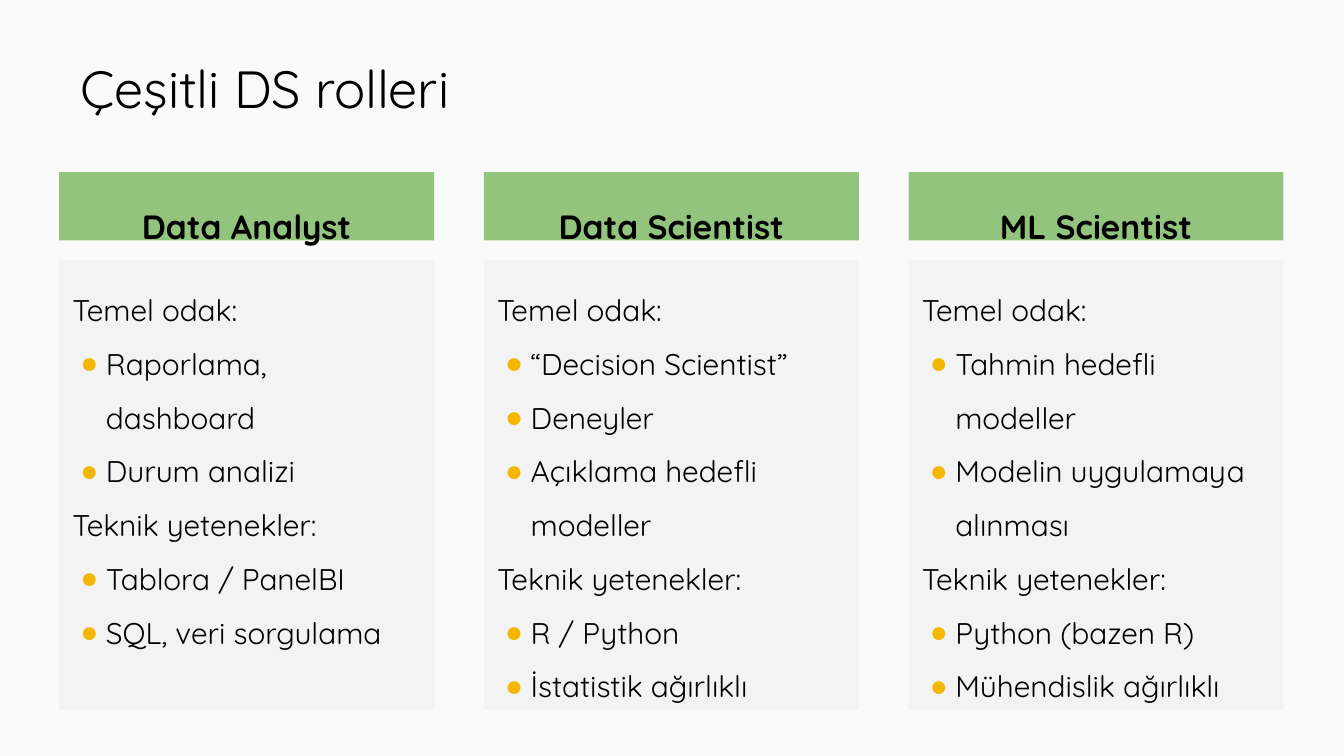
"""Build a slide that compares three data science roles in columns."""
from dataclasses import dataclass

from lxml.etree import SubElement
from pptx import Presentation
from pptx.dml.color import RGBColor
from pptx.enum.shapes import MSO_SHAPE
from pptx.enum.text import MSO_ANCHOR, PP_ALIGN
from pptx.oxml.ns import qn
from pptx.util import Inches, Pt


@dataclass(frozen=True)
class Theme:
    font: str = "Quicksand"
    mark: str = "Arial"
    page: str = "FAFAFA"
    ink: str = "000000"
    head: str = "93C47D"
    card: str = "F3F3F3"
    dot: str = "F4B700"
    title: int = 28
    label: int = 18
    body: int = 16


theme = Theme()


def write(frame, text, size, bold=False, align=PP_ALIGN.LEFT, gap=1.5, bullet=False):
    first = frame.paragraphs[0]
    para = frame.add_paragraph() if first.runs else first
    para.alignment = align
    para.line_spacing = gap
    run = para.add_run()
    run.text = text
    run.font.name = theme.font
    run.font.size = Pt(size)
    run.font.bold = bold
    run.font.color.rgb = RGBColor.from_string(theme.ink)
    if bullet:
        props = para._p.get_or_add_pPr()
        props.set("marL", str(Inches(0.25)))
        props.set("indent", str(Inches(-0.19)))
        color = SubElement(props, qn("a:buClr"))
        SubElement(color, qn("a:srgbClr"), val=theme.dot)
        SubElement(props, qn("a:buFont"), typeface=theme.mark)
        SubElement(props, qn("a:buChar"), char="●")


def panel(left, top, height, fill):
    box = slide.shapes.add_shape(
        MSO_SHAPE.RECTANGLE, Inches(left), Inches(top), Inches(2.79), Inches(height)
    )
    box.shadow.inherit = False
    box.fill.solid()
    box.fill.fore_color.rgb = RGBColor.from_string(fill)
    box.line.fill.background()
    return box.text_frame


roles = [
    ("Data Analyst",
     ["Raporlama, dashboard", "Durum analizi"],
     ["Tablora / PanelBI", "SQL, veri sorgulama"]),
    ("Data Scientist",
     ["“Decision Scientist”", "Deneyler", "Açıklama hedefli modeller"],
     ["R / Python", "İstatistik ağırlıklı"]),
    ("ML Scientist",
     ["Tahmin hedefli modeller", "Modelin uygulamaya alınması"],
     ["Python (bazen R)", "Mühendislik ağırlıklı"]),
]

deck = Presentation()
deck.slide_width = Inches(10)
deck.slide_height = Inches(10) * 9 // 16
slide = deck.slides.add_slide(deck.slide_layouts[6])
slide.background.fill.solid()
slide.background.fill.fore_color.rgb = RGBColor.from_string(theme.page)

title = slide.shapes.add_textbox(Inches(0.5), Inches(0.32), Inches(5.92), Inches(0.67))
frames = [title.text_frame]
write(title.text_frame, "Çeşitli DS rolleri", theme.title, gap=1.0)

for col, (role, focus, skills) in enumerate(roles):
    left = 0.44 + col * 3.16
    card = panel(left, 1.94, 3.34, theme.card)
    for label, items in (("Temel odak:", focus), ("Teknik yetenekler:", skills)):
        write(card, label, theme.body)
        for item in items:
            write(card, item, theme.body, bullet=True)
    head = panel(left, 1.28, 0.51, theme.head)
    write(head, role, theme.label, bold=True, align=PP_ALIGN.CENTER)
    frames += [card, head]

for frame in frames:
    frame.word_wrap = True
    frame.vertical_anchor = MSO_ANCHOR.TOP
    frame.margin_left = frame.margin_right = Inches(0.1)
    frame.margin_top = frame.margin_bottom = Inches(0.1)

deck.save("out.pptx")
